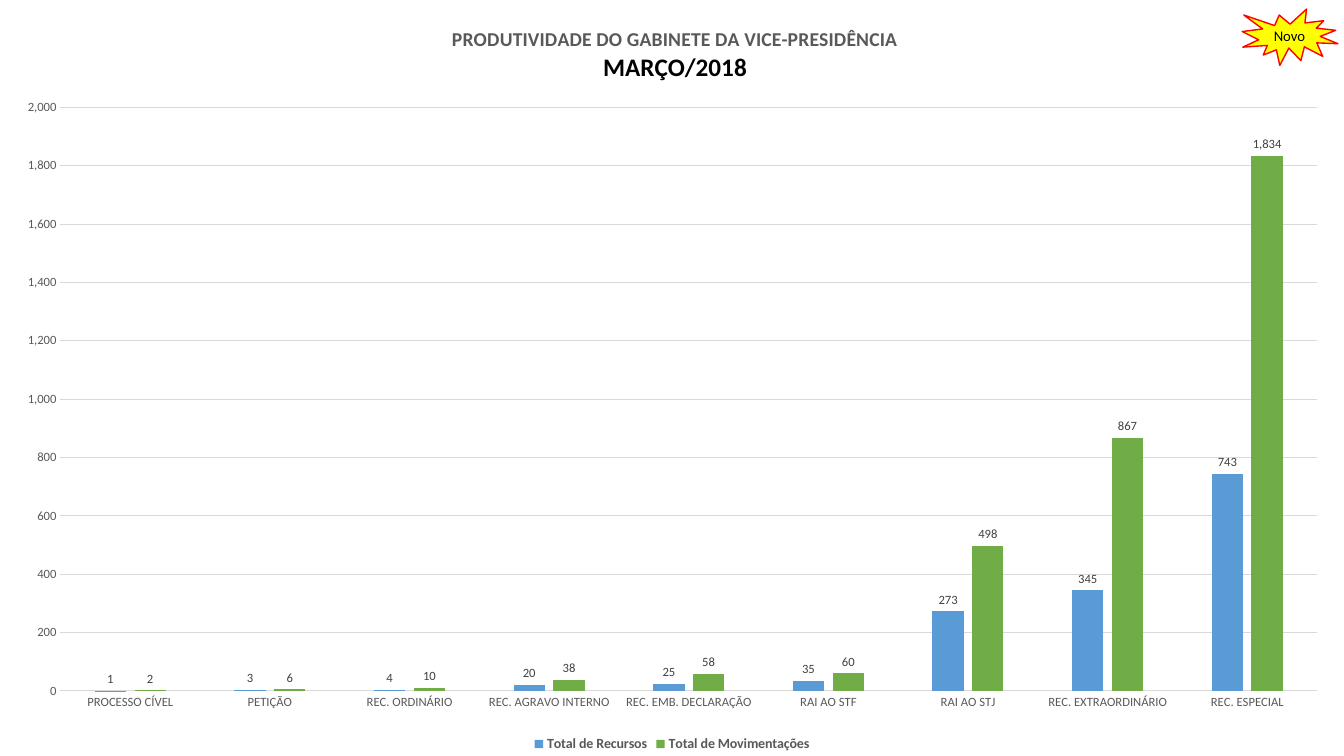
from lxml import etree
from pptx import Presentation
from pptx.chart.data import CategoryChartData
from pptx.dml.color import RGBColor
from pptx.enum.chart import XL_CHART_TYPE, XL_LABEL_POSITION, XL_LEGEND_POSITION, XL_TICK_MARK
from pptx.enum.shapes import MSO_SHAPE
from pptx.enum.text import MSO_ANCHOR, PP_ALIGN
from pptx.oxml.ns import qn
from pptx.util import Inches, Pt

COLUMNS = XL_CHART_TYPE.COLUMN_CLUSTERED
OUTSIDE_END = XL_LABEL_POSITION.OUTSIDE_END
LEGEND_BOTTOM = XL_LEGEND_POSITION.BOTTOM
NO_TICK = XL_TICK_MARK.NONE
STARBURST = MSO_SHAPE.EXPLOSION1
MIDDLE = MSO_ANCHOR.MIDDLE
CENTER = PP_ALIGN.CENTER

BLACK = RGBColor(0x00, 0x00, 0x00)
DARK_GRAY = RGBColor(0x40, 0x40, 0x40)
GRAY = RGBColor(0x59, 0x59, 0x59)
LIGHT_GRAY = RGBColor(0xD9, 0xD9, 0xD9)
BLUE = RGBColor(0x5B, 0x9B, 0xD5)
GREEN = RGBColor(0x70, 0xAD, 0x47)
YELLOW = RGBColor(0xFF, 0xFF, 0x00)
RED = RGBColor(0xFF, 0x00, 0x00)

NUMBER_FORMAT = "#,##0"
HEADING = [("PRODUTIVIDADE DO GABINETE DA VICE-PRESIDÊNCIA", 14, GRAY),
           ("MARÇO/2018", 18, BLACK)]
APPEAL_TYPES = ["PROCESSO CÍVEL", "PETIÇÃO", "REC. ORDINÁRIO", "REC. AGRAVO INTERNO",
                "REC. EMB. DECLARAÇÃO", "RAI AO STF", "RAI AO STJ",
                "REC. EXTRAORDINÁRIO", "REC. ESPECIAL"]
TOTALS = [("Total de Recursos", BLUE, [1, 3, 4, 20, 25, 35, 273, 345, 743]),
          ("Total de Movimentações", GREEN, [2, 6, 10, 38, 58, 60, 498, 867, 1834])]


class ProductivitySlide:
    """Draws the productivity chart and its badge in one shared style."""

    def __init__(self, presentation, font_name):
        self.slide = presentation.slides.add_slide(presentation.slide_layouts[6])
        self.width = presentation.slide_width
        self.height = presentation.slide_height
        self.font_name = font_name

    def style(self, font, size, color, bold=False):
        font.name = self.font_name
        font.size = Pt(size)
        font.color.rgb = color
        font.bold = bold

    def place(self, parent, index, **fractions):
        for former in parent.findall(qn("c:layout")):
            parent.remove(former)
        layout = etree.Element(qn("c:layout"))
        parent.insert(index, layout)
        manual = etree.SubElement(layout, qn("c:manualLayout"))
        if "w" in fractions:
            etree.SubElement(manual, qn("c:layoutTarget")).set("val", "inner")
        for side in ("x", "y"):
            etree.SubElement(manual, qn(f"c:{side}Mode")).set("val", "edge")
        for side, fraction in fractions.items():
            etree.SubElement(manual, qn(f"c:{side}")).set("val", str(fraction))

    def add_column_chart(self, categories, totals):
        chart_data = CategoryChartData(number_format=NUMBER_FORMAT)
        chart_data.categories = categories
        for name, _, values in totals:
            chart_data.add_series(name, values)
        chart = self.slide.shapes.add_chart(
            COLUMNS, 0, 0, self.width, self.height, chart_data).chart
        self.style(chart.font, 10, BLACK)
        self.place(chart.element.find(".//" + qn("c:plotArea")), 0,
                   x=0.045, y=0.142, w=0.935, h=0.772)
        columns = chart.plots[0]
        columns.gap_width = 219
        columns.overlap = -27
        columns.vary_by_categories = False
        for series, (_, color, _) in zip(columns.series, totals):
            self.format_series(series, color)
        self.format_axes(chart)
        chart.has_legend = True
        chart.legend.position = LEGEND_BOTTOM
        chart.legend.include_in_layout = False
        self.style(chart.legend.font, 10, GRAY, bold=True)
        return chart

    def format_series(self, series, color):
        series.format.fill.solid()
        series.format.fill.fore_color.rgb = color
        series.invert_if_negative = False
        labels = series.data_labels
        labels.show_value = True
        labels.position = OUTSIDE_END
        labels.number_format = NUMBER_FORMAT
        labels.number_format_is_linked = False
        self.style(labels.font, 9, DARK_GRAY)

    def format_axes(self, chart):
        for axis in (chart.category_axis, chart.value_axis):
            axis.major_tick_mark = NO_TICK
            axis.minor_tick_mark = NO_TICK
            self.style(axis.tick_labels.font, 9, GRAY)
        amounts = chart.value_axis
        amounts.minimum_scale, amounts.maximum_scale, amounts.major_unit = 0, 2000, 200
        amounts.tick_labels.number_format = NUMBER_FORMAT
        amounts.tick_labels.number_format_is_linked = False
        amounts.format.line.fill.background()
        for line in (chart.category_axis.format.line, amounts.major_gridlines.format.line):
            line.color.rgb = LIGHT_GRAY
            line.width = Pt(0.75)

    def add_chart_heading(self, chart, lines):
        heading = chart.chart_title
        text_frame = heading.text_frame
        text_frame.text = "\n".join(text for text, _, _ in lines)
        for paragraph, (_, size, color) in zip(text_frame.paragraphs, lines):
            paragraph.alignment = CENTER
            self.style(paragraph.runs[0].font, size, color, bold=True)
        heading.include_in_layout = False
        self.place(heading.element, 1, x=0.334, y=0.03)

    def add_badge(self, text, left, top, width, height):
        badge = self.slide.shapes.add_shape(
            STARBURST, Inches(left), Inches(top), Inches(width), Inches(height))
        badge.shadow.inherit = False
        badge.fill.solid()
        badge.fill.fore_color.rgb = YELLOW
        badge.line.color.rgb = RED
        badge.line.width = Pt(1)
        text_frame = badge.text_frame
        text_frame.text = text
        text_frame.word_wrap = False
        text_frame.vertical_anchor = MIDDLE
        caption = text_frame.paragraphs[0]
        caption.alignment = CENTER
        self.style(caption.runs[0].font, 10.5, BLACK)


def main():
    presentation = Presentation()
    presentation.slide_width = Inches(13.33)
    presentation.slide_height = Inches(7.5)
    productivity = ProductivitySlide(presentation, "Calibri")
    chart = productivity.add_column_chart(APPEAL_TYPES, TOTALS)
    productivity.add_chart_heading(chart, HEADING)
    productivity.add_badge("Novo", 12.32, 0.09, 0.95, 0.56)
    presentation.save("out.pptx")


if __name__ == "__main__":
    main()
